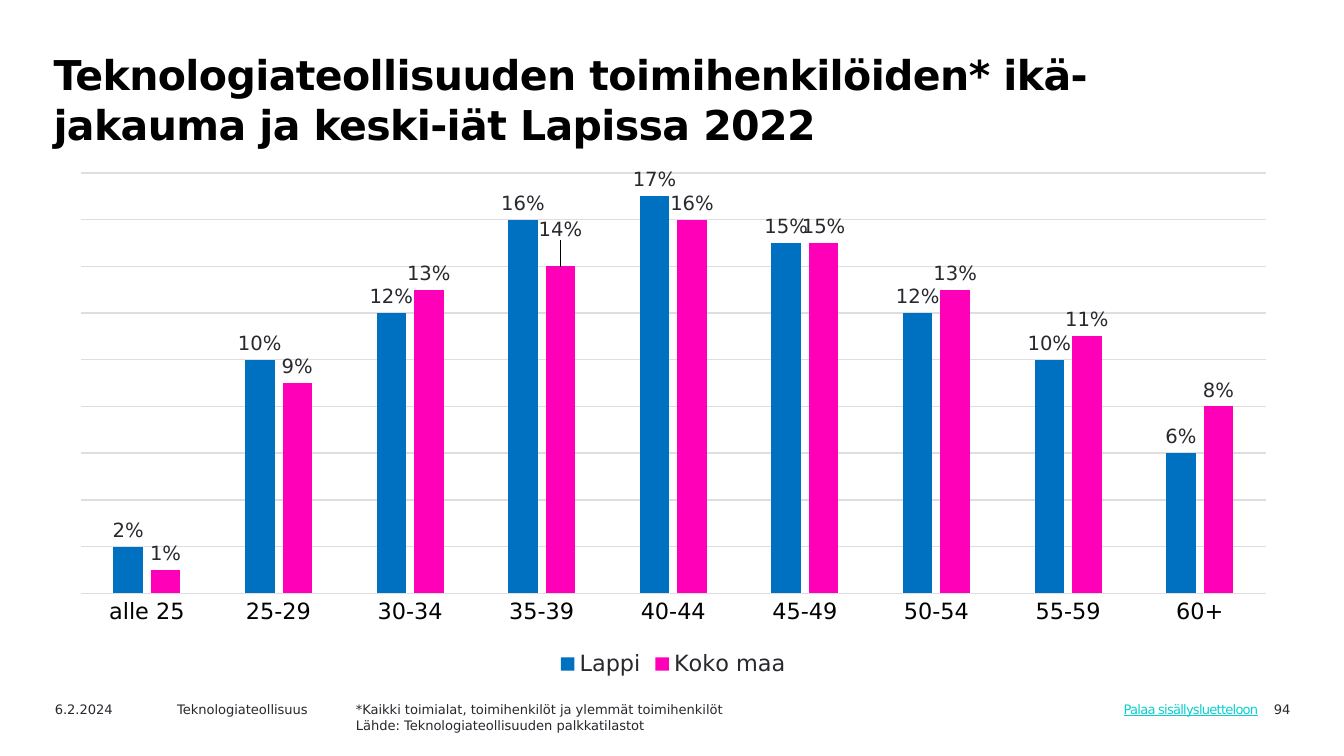
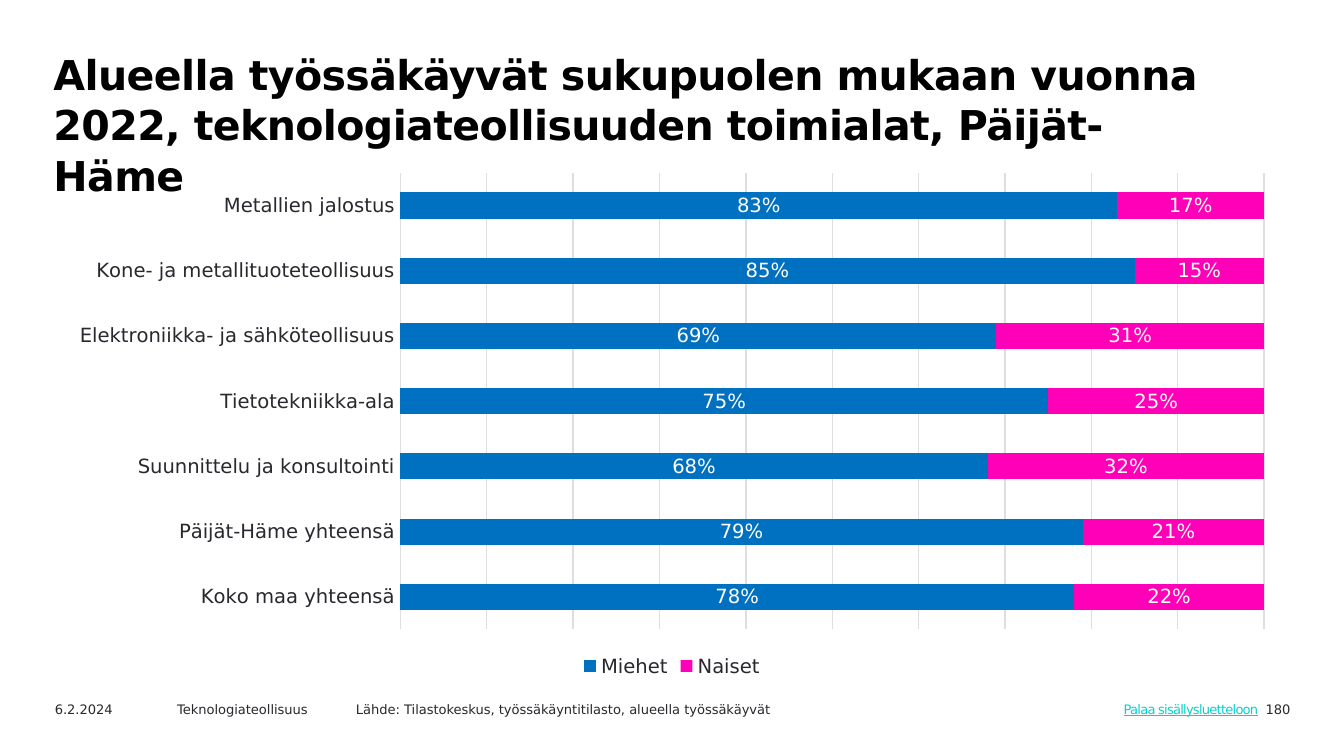
from lxml import etree
from pptx import Presentation
from pptx.chart.data import CategoryChartData
from pptx.dml.color import RGBColor
from pptx.enum import chart as ch, text as tx
from pptx.oxml import ns
from pptx.util import Pt

FONT = "DejaVu Sans"
BLACK = RGBColor(0x00, 0x00, 0x00)
INK = RGBColor(0x29, 0x28, 0x2E)
WHITE = RGBColor(0xFF, 0xFF, 0xFF)
GRID = RGBColor(0xDE, 0xDD, 0xE1)
BLUE = RGBColor(0x00, 0x70, 0xC0)
PINK = RGBColor(0xFF, 0x00, 0xB8)
TEAL = RGBColor(0x0A, 0xCF, 0xCF)

FOOTER_TOP = 372.24
TITLE_FONT = {"size": Pt(22), "bold": True}
FOOTER_FONT = {"size": Pt(7)}
LINK_FONT = {"size": Pt(7), "underline": True}
MARGINS = ("margin_left", "margin_top", "margin_right", "margin_bottom")


def apply(target, formats):
    for name, value in formats.items():
        setattr(target, name, value)


def style_font(font, color, formats):
    apply(font, {"name": FONT, **formats})
    font.color.rgb = color


def add_text(slide, box, lines, color, formats, align=tx.PP_ALIGN.LEFT, spacing=0):
    frame = slide.shapes.add_textbox(*map(Pt, box)).text_frame
    apply(frame, {"word_wrap": True, "vertical_anchor": tx.MSO_ANCHOR.TOP})
    for index, line in enumerate(lines):
        paragraph = frame.add_paragraph() if index else frame.paragraphs[0]
        paragraph.alignment = align
        run = paragraph.add_run()
        run.text = line
        style_font(run.font, color, formats)
        if spacing:
            run._r.get_or_add_rPr().set("spc", str(spacing))
    return frame


def add_title(slide, box, title):
    frame = add_text(slide, box, [title], BLACK, TITLE_FONT, spacing=-30)
    heading = frame.paragraphs[0]
    heading.line_spacing = Pt(27)
    properties = heading._p.get_or_add_pPr()
    properties.set("marL", str(Pt(1.44)))
    properties.set("indent", "0")


def add_footer(slide, left, top, source_box, source, page):
    for offset, width, words in ((0, 72, "6.2.2024"), (65.5, 102.2, "Teknologiateollisuus")):
        add_text(slide, (left + offset, top, width, 13), [words], INK, FOOTER_FONT)
    add_text(slide, (left + 161.3, top, *source_box), source, INK, FOOTER_FONT)
    add_text(slide, (left + 608.4, top, 67.7, 13), [page], INK, FOOTER_FONT,
             tx.PP_ALIGN.RIGHT)
    contents = add_text(slide, (left + 576.7, top + 0.7, 87.8, 14.4),
                        ["Palaa sisällysluetteloon"], TEAL, LINK_FONT, spacing=-40)
    apply(contents, dict.fromkeys(MARGINS, Pt(3)))


def style_axes(chart, category_color, category_size, top_value, step):
    ages = chart.category_axis
    apply(ages, {"major_tick_mark": ch.XL_TICK_MARK.NONE,
                 "minor_tick_mark": ch.XL_TICK_MARK.NONE,
                 "has_major_gridlines": False})
    style_font(ages.tick_labels.font, category_color, {"size": Pt(category_size)})
    shares = chart.value_axis
    apply(shares, {"visible": False, "has_major_gridlines": True,
                   "minimum_scale": 0, "maximum_scale": top_value, "major_unit": step})
    shares.tick_labels.number_format = "0%"
    shares.tick_labels.number_format_is_linked = False
    for line in (ages.format.line, shares.major_gridlines.format.line):
        line.width = Pt(0.75)
        line.color.rgb = GRID


def add_share_chart(slide, box, kind, categories, groups, gap, overlap,
                    label_color, label_position, legend_size, axis):
    data = CategoryChartData(number_format="0%")
    data.categories = categories
    for name, percents in groups.items():
        data.add_series(name, [percent / 100 for percent in percents])
    chart = slide.shapes.add_chart(kind, *map(Pt, box), data).chart
    apply(chart, {"has_title": False, "has_legend": True})
    style_font(chart.font, INK, {"size": Pt(10.5)})
    apply(chart.legend, {"position": ch.XL_LEGEND_POSITION.BOTTOM,
                         "include_in_layout": False})
    style_font(chart.legend.font, INK, {"size": Pt(legend_size)})
    style_axes(chart, **axis)
    plot = chart.plots[0]
    apply(plot, {"gap_width": gap, "overlap": overlap, "vary_by_categories": False})
    for series, color in zip(plot.series, (BLUE, PINK)):
        series.format.fill.solid()
        series.format.fill.fore_color.rgb = color
        labels = series.data_labels
        apply(labels, {"show_value": True, "number_format": "0%",
                       "number_format_is_linked": False, "position": label_position})
        style_font(labels.font, label_color, {"size": Pt(10.5)})
    return chart


def raise_label(series, index, shift):
    label = series.points[index].data_label
    style_font(label.font, INK, {"size": Pt(10.5)})
    label.position = ch.XL_LABEL_POSITION.OUTSIDE_END
    position = series._element.xpath(f"c:dLbls/c:dLbl/c:idx[@val='{index}']")[0]
    layout = etree.Element(ns.qn("c:layout"))
    manual = etree.SubElement(layout, ns.qn("c:manualLayout"))
    for axis, value in (("x", 0), ("y", shift)):
        etree.SubElement(manual, ns.qn(f"c:{axis}")).set("val", str(value))
    position.addnext(layout)


def build_age_slide(slide):
    add_title(slide, (20.16, 22.3, 671.04, 76.3),
              "Teknologiateollisuuden toimihenkilöiden* ikä-jakauma "
              "ja keski-iät Lapissa 2022")
    chart = add_share_chart(
        slide, (30.24, 87.12, 660.96, 278.64), ch.XL_CHART_TYPE.COLUMN_CLUSTERED,
        ["alle 25", "25-29", "30-34", "35-39", "40-44", "45-49", "50-54", "55-59", "60+"],
        {"Lappi": [2, 10, 12, 16, 17, 15, 12, 10, 6],
         "Koko maa": [1, 9, 13, 14, 16, 15, 13, 11, 8]},
        219, -27, INK, ch.XL_LABEL_POSITION.OUTSIDE_END, 12,
        {"category_color": BLACK, "category_size": 12, "top_value": 0.18, "step": 0.02})
    raise_label(chart.plots[0].series[1], 3, -0.04)
    add_footer(slide, 22.3, FOOTER_TOP, (249.8, 23),
               ["*Kaikki toimialat, toimihenkilöt ja ylemmät toimihenkilöt",
                "Lähde: Teknologiateollisuuden palkkatilastot"], "94")


def build_gender_slide(slide):
    add_title(slide, (20.16, 22.3, 629.3, 64.8),
              "Alueella työssäkäyvät sukupuolen mukaan vuonna 2022, "
              "teknologiateollisuuden toimialat, Päijät-Häme")
    men = [78, 79, 68, 75, 69, 85, 83]
    add_share_chart(
        slide, (29.52, 87.12, 660.96, 278.64), ch.XL_CHART_TYPE.BAR_STACKED_100,
        ["Koko maa yhteensä", "Päijät-Häme yhteensä", "Suunnittelu ja konsultointi",
         "Tietotekniikka-ala", "Elektroniikka- ja sähköteollisuus",
         "Kone- ja metallituoteteollisuus", "Metallien jalostus"],
        {"Miehet": men, "Naiset": [100 - share for share in men]},
        150, 100, WHITE, ch.XL_LABEL_POSITION.CENTER, 10.5,
        {"category_color": INK, "category_size": 10.5, "top_value": 1, "step": 0.1})
    add_footer(slide, 22.3, FOOTER_TOP, (354.2, 13),
               ["Lähde: Tilastokeskus, työssäkäyntitilasto, alueella työssäkäyvät"], "180")


def main():
    deck = Presentation()
    apply(deck, {"slide_width": Pt(720), "slide_height": Pt(405)})
    for build in (build_age_slide, build_gender_slide):
        build(deck.slides.add_slide(deck.slide_layouts[6]))
    deck.save("out.pptx")


if __name__ == "__main__":
    main()
